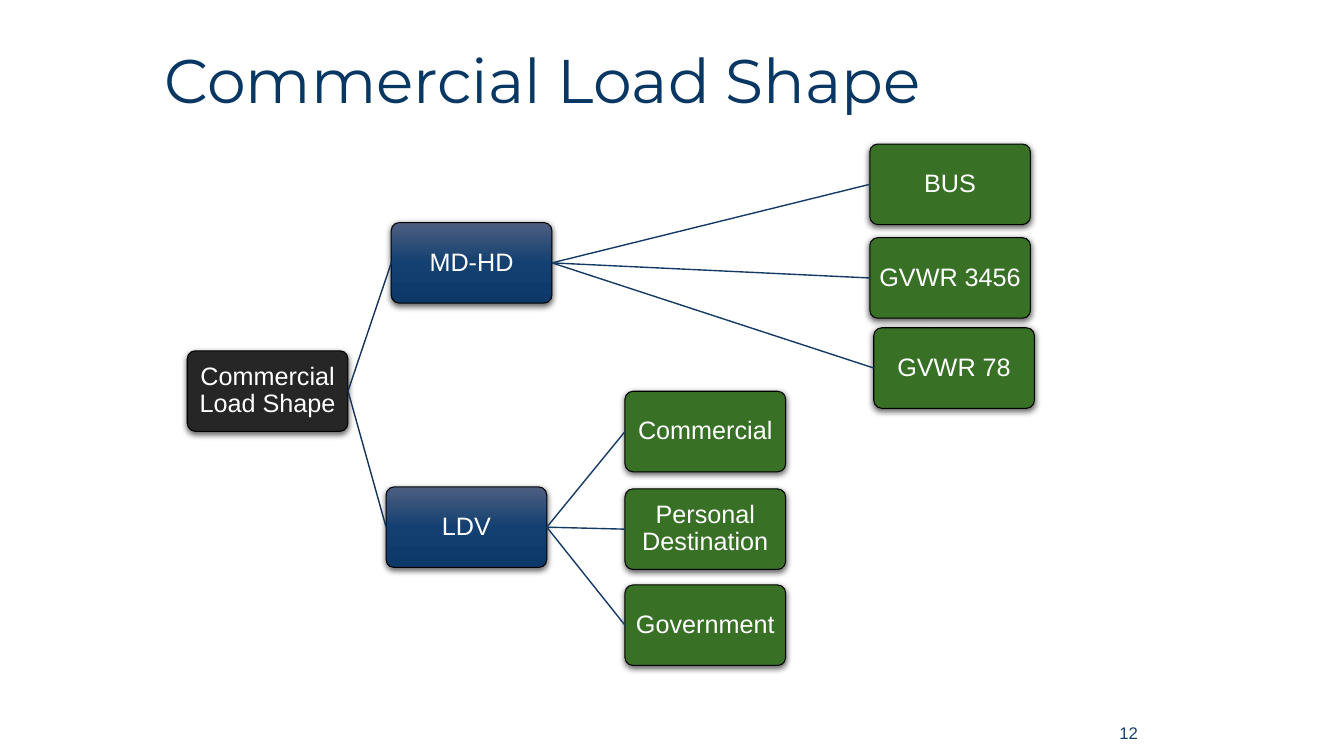
import copy

import pptx
import pptx.dml.color
import pptx.enum.shapes
import pptx.enum.text
import pptx.oxml
import pptx.oxml.ns
import pptx.util
from pptx.util import Cm, Pt

ALIGN = pptx.enum.text.PP_ALIGN
BLUE = ("4D5E80", "134071", "0D3969")
GREEN = ("387026",)
BLACK = ("262626",)
BOX_W, BOX_H = Cm(4.05), Cm(2.03)
SPACE = pptx.oxml.ns.nsdecls("a")
PLAIN = f"<a:effectLst {SPACE}/>"
SHADOW = (
    f'<a:outerShdw {SPACE} blurRad="57150" dist="19050"'
    ' dir="5400000" algn="ctr" rotWithShape="0"><a:srgbClr val="000000">'
    '<a:alpha val="63000"/></a:srgbClr></a:outerShdw>'
)

# Each branch: text, left and top in cm, then its leaves
ROOT = ("Commercial Load Shape", 4.72, 8.84)
TREE = [
    (("MD-HD", 9.86, 5.61),
     [("BUS", 21.92, 3.63), ("GVWR 3456", 21.92, 5.99), ("GVWR 78", 22.02, 8.26)]),
    (("LDV", 9.73, 12.27),
     [("Commercial", 15.75, 9.86), ("Personal Destination", 15.75, 12.32),
      ("Government", 15.75, 14.74)]),
]


def rgb(code):
    return pptx.dml.color.RGBColor.from_string(code)


def apply(target, values):
    for name, value in values.items():
        setattr(target, name, value)


def write(shape, text, size, face, color, align, inset=None, spacing=None):
    frame = shape.text_frame
    frame.text = text
    apply(frame, {"word_wrap": True,
                  "auto_size": pptx.enum.text.MSO_AUTO_SIZE.NONE,
                  "vertical_anchor": pptx.enum.text.MSO_ANCHOR.MIDDLE})
    if inset is not None:
        sides = ("left", "top", "right", "bottom")
        apply(frame, {f"margin_{side}": inset for side in sides})
    para = frame.paragraphs[0]
    apply(para, {"alignment": align, "line_spacing": spacing})
    font = para.runs[0].font
    apply(font, {"size": Pt(size), "name": face})
    font.color.rgb = rgb(color)


def paint(shape, colors):
    """Fill with one colour, or with three running from top to bottom."""
    fill = shape.fill
    if len(colors) == 1:
        fill.solid()
        fill.fore_color.rgb = rgb(colors[0])
        return
    fill.gradient()
    fill.gradient_angle = 270
    stops = shape.element.spPr.find(".//" + pptx.oxml.ns.qn("a:gsLst"))
    stops.insert(1, copy.deepcopy(stops[0]))
    for i, (stop, color) in enumerate(zip(fill.gradient_stops, colors)):
        stop.position = i / 2
        stop.color.rgb = rgb(color)


def box(slide, node, colors):
    text, left, top = node
    shape = slide.shapes.add_shape(
        pptx.enum.shapes.MSO_SHAPE.ROUNDED_RECTANGLE,
        Cm(left), Cm(top), BOX_W, BOX_H)
    shape.adjustments[0] = 0.1
    paint(shape, colors)
    shape.line.color.rgb = rgb("000000")
    shape.line.width = Pt(0.75)
    shape.shadow.inherit = False
    glow = shape.element.spPr.find(pptx.oxml.ns.qn("a:effectLst"))
    glow.append(pptx.oxml.parse_xml(SHADOW))
    write(shape, text, 18, "Arial", "FFFFFF", ALIGN.CENTER, Cm(0.09), 0.9)
    return shape


def link(slide, start, end, color):
    line = slide.shapes.add_connector(
        pptx.enum.shapes.MSO_CONNECTOR.STRAIGHT, 0, 0, 0, 0)
    line.begin_connect(start, 3)
    line.end_connect(end, 1)
    line.line.color.rgb = rgb(color)
    line.line.width = Pt(1)
    line.element.spPr.append(pptx.oxml.parse_xml(PLAIN))


def main():
    deck = pptx.Presentation()
    apply(deck, {"slide_width": Cm(33.87), "slide_height": Cm(19.05)})
    slide = deck.slides.add_slide(deck.slide_layouts[5])

    title = slide.shapes.title
    apply(title, {"left": Cm(3.89), "top": Cm(0.66),
                  "width": Cm(27.66), "height": Cm(2.9)})
    write(title, "Commercial Load Shape", 44, "Montserrat", "083763",
          ALIGN.LEFT, spacing=0.9)

    root = box(slide, ROOT, BLACK)
    for node, leaves in TREE:
        branch = box(slide, node, BLUE)
        link(slide, root, branch, "123357")
        for leaf in leaves:
            link(slide, branch, box(slide, leaf, GREEN), "153A63")

    number = slide.shapes.add_textbox(Cm(23.93), Cm(17.96), Cm(5), Cm(1.02))
    write(number, "12", 12, "Arial", "17406D", ALIGN.RIGHT)
    deck.save("out.pptx")


if __name__ == "__main__":
    main()
